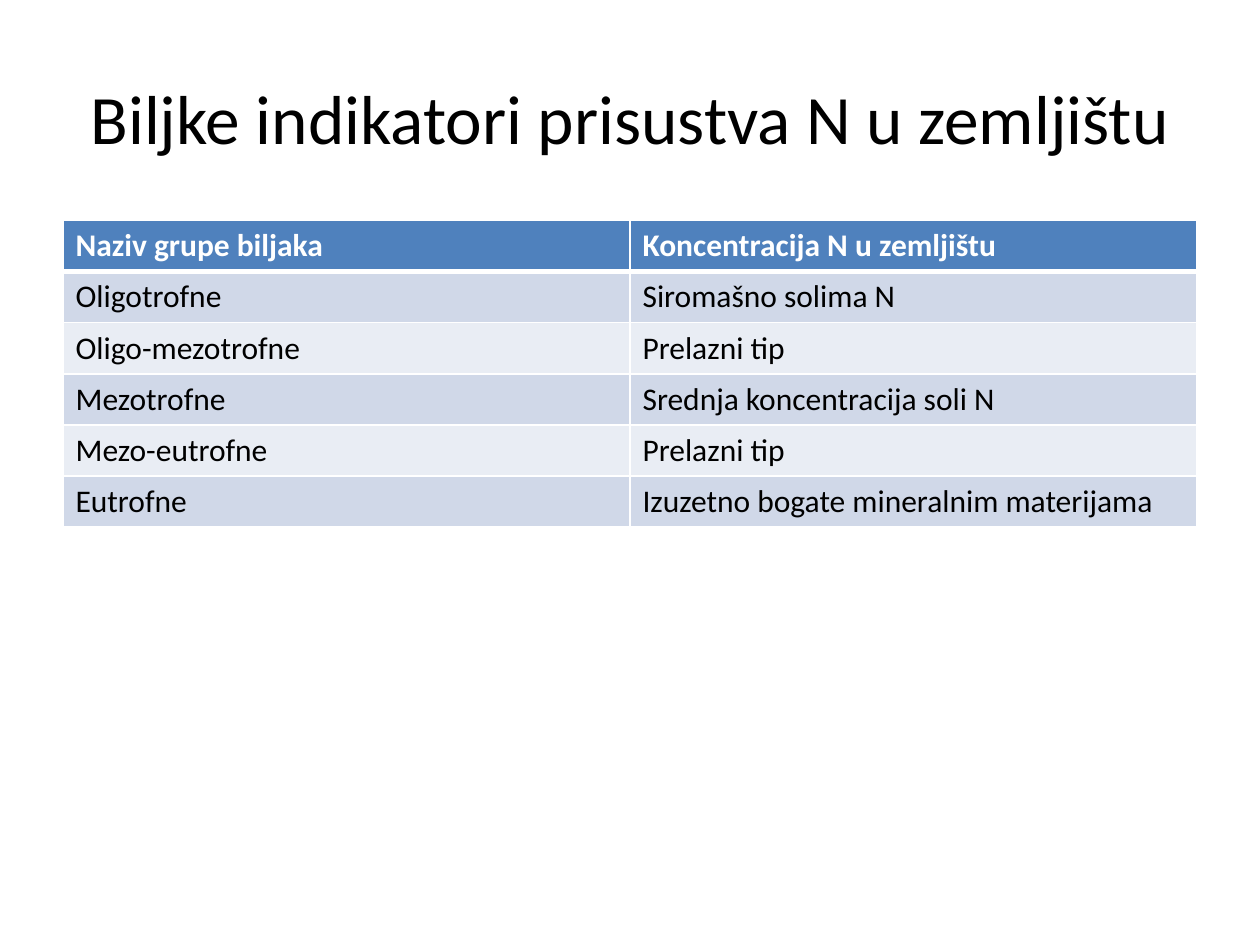
"""Build a slide with a table of plant groups that indicate soil nitrogen."""
from lxml.etree import SubElement as Sub
from pptx import Presentation
from pptx.dml.color import RGBColor as Rgb
from pptx.enum.text import MSO_ANCHOR as Anchor, MSO_AUTO_SIZE as Fit, PP_ALIGN as Align
from pptx.oxml.ns import qn
from pptx.util import Inches, Pt

TITLE = "Biljke indikatori prisustva N u zemljištu"
ROWS = [
    ("Naziv grupe biljaka", "Koncentracija N u zemljištu"),
    ("Oligotrofne", "Siromašno solima N"),
    ("Oligo-mezotrofne", "Prelazni tip"),
    ("Mezotrofne", "Srednja koncentracija soli N"),
    ("Mezo-eutrofne", "Prelazni tip"),
    ("Eutrofne", "Izuzetno bogate mineralnim materijama"),
]
THEME = {
    "font": "Calibri", "title": 39.6, "cell": 18,
    "ink": "000000", "paper": "FFFFFF", "head": "4F81BD",
    "bands": ("D0D8E8", "E9EDF4"), "rule": 1, "thick": 3,
}
LEFT, WIDTH, TOP, ROW = 0.5, 9, 1.75, 0.405


def write(frame, text, size, color, bold=False):
    run = frame.paragraphs[0].add_run()
    run.text = text
    font = run.font
    font.name, font.size, font.bold = THEME["font"], Pt(size), bold
    font.color.rgb = Rgb.from_string(color)


def edge(cell, side, width):
    line = Sub(cell._tc.get_or_add_tcPr(), qn(f"a:ln{side}"), w=str(Pt(width)))
    Sub(Sub(line, qn("a:solidFill")), qn("a:srgbClr"), val=THEME["paper"])


def style(cell, row):
    for side in "LRTB":
        heavy = (row, side) in ((0, "B"), (1, "T"))
        edge(cell, side, THEME["thick" if heavy else "rule"])
    fill = THEME["bands"][(row - 1) % 2] if row else THEME["head"]
    cell.fill.solid()
    cell.fill.fore_color.rgb = Rgb.from_string(fill)


def add_title(slide):
    title = slide.shapes.title
    title.left, title.top = Inches(LEFT), Inches(0.3)
    title.width, title.height = Inches(WIDTH), Inches(1.25)
    frame = title.text_frame
    frame.word_wrap, frame.auto_size = True, Fit.NONE
    frame.vertical_anchor = Anchor.MIDDLE
    frame.paragraphs[0].alignment = Align.CENTER
    write(frame, TITLE, THEME["title"], THEME["ink"])


def add_grid(slide):
    box = map(Inches, (LEFT, TOP, WIDTH, ROW * len(ROWS)))
    grid = slide.shapes.add_table(len(ROWS), len(ROWS[0]), *box).table
    for r, texts in enumerate(ROWS):
        for c, text in enumerate(texts):
            cell = grid.cell(r, c)
            style(cell, r)
            color = THEME["ink" if r else "paper"]
            write(cell.text_frame, text, THEME["cell"], color, r == 0)


def main():
    deck = Presentation()
    deck.slide_width, deck.slide_height = Inches(10), Inches(7.5)
    slide = deck.slides.add_slide(deck.slide_layouts[5])
    add_title(slide)
    add_grid(slide)
    deck.save("out.pptx")


if __name__ == "__main__":
    main()
